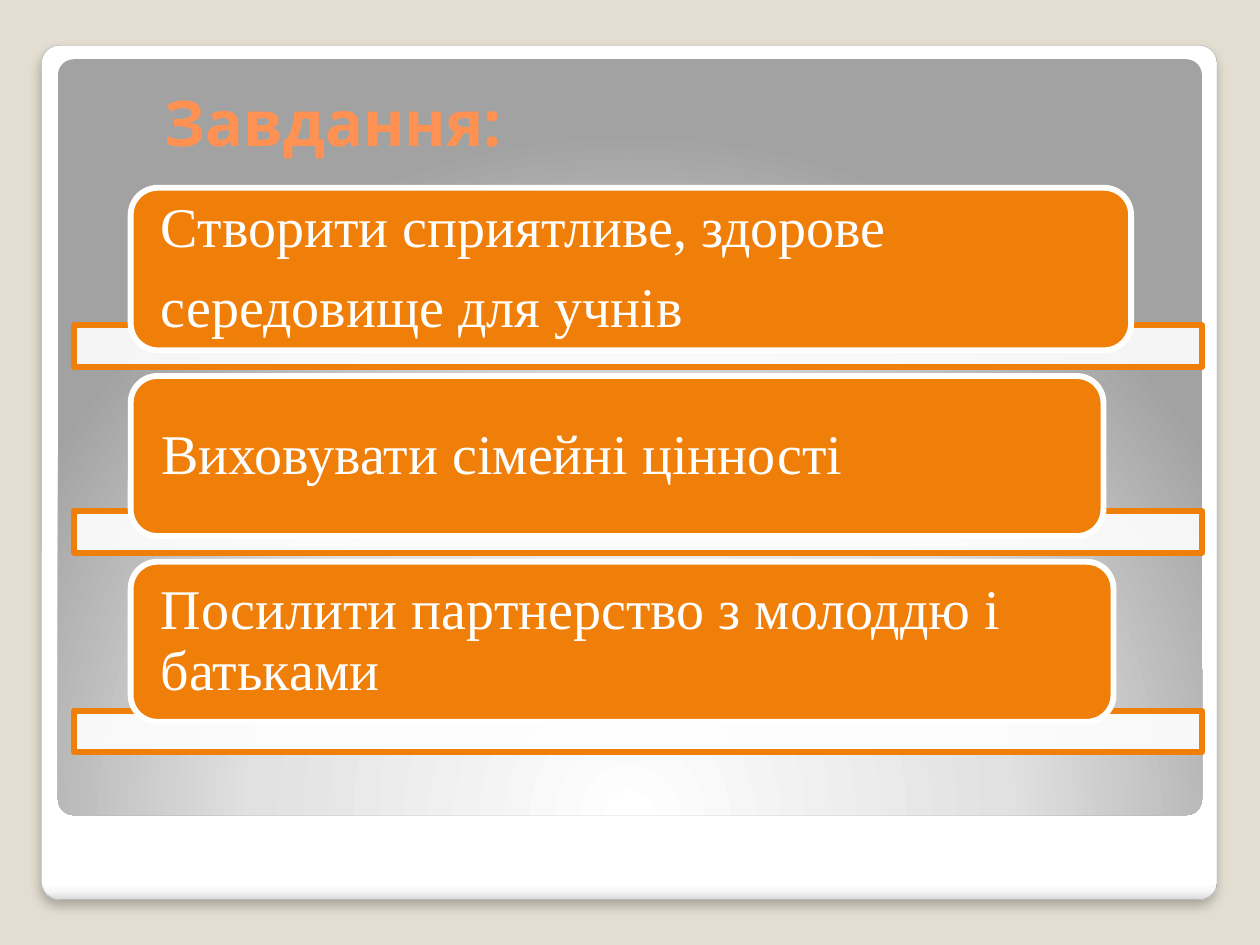
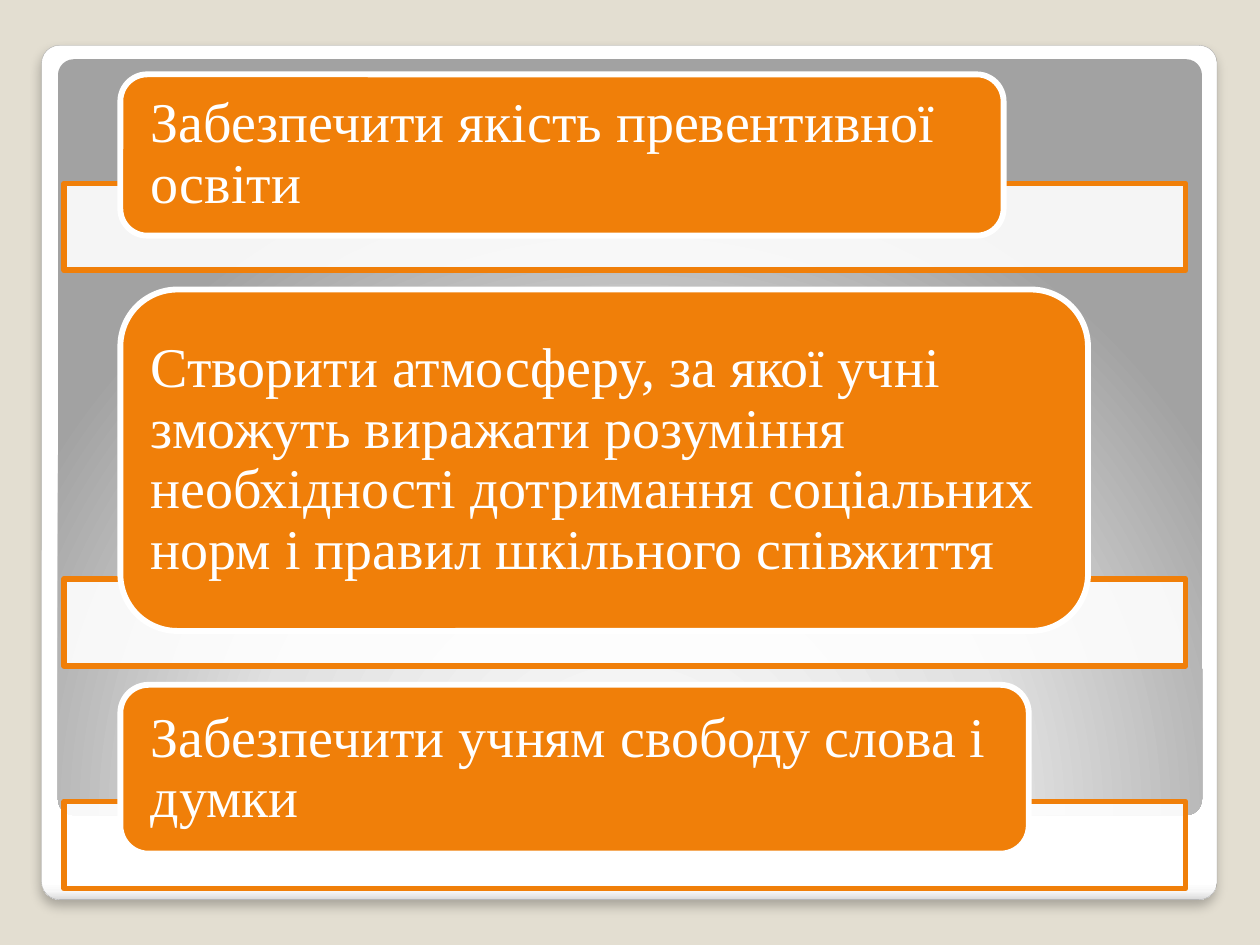
from collections import namedtuple

from lxml.etree import SubElement
from pptx import Presentation
from pptx.dml.color import RGBColor
from pptx.enum.shapes import MSO_SHAPE as Preset
from pptx.enum.text import MSO_ANCHOR as Anchor, PP_ALIGN as Align
from pptx.oxml.ns import qn
from pptx.util import Emu, Inches, Pt

COLORS = {
    "backdrop": "E3DED1",
    "white": "FFFFFF",
    "orange": "F07F09",
    "title": "FF9153",
    "frame_edge": "A4A4A4",
    "frame_low": "F7F7F7",
    "frame_foot": "DADADA",
    "panel_mid": "E1E1E1",
    "panel_rim": "A2A2A2",
    "shadow": "000000",
}
COLUMNS, ROWS = 100, 75
WIDTH, HEIGHT = Inches(10), Inches(7.5)
COLUMN, ROW = WIDTH / COLUMNS, HEIGHT / ROWS

Box = namedtuple("Box", "left top width height")
Task = namedtuple("Task", "lines width height overlap", defaults=(0.6,))

FRAME = Box(3.3, 3.6, 93.3, 67.8)
PANEL = Box(4.6, 4.7, 90.8, 60)
TITLE = Box(13.1, 6, 60, 7.3)

CARD_INDENT = 0.05
CARD_PADDING = 2.4
CARD_CORNER = 1 / 6
CORNER_INSET = 0.29
GAP_PER_BAR = 0.22
EDGE = 3.35

TITLE_FONT = {"name": "Verdana", "size": Pt(36), "bold": True}
TASK_FONT = {"name": "Times New Roman", "size": Pt(32)}
TASK_PARAGRAPH = {"alignment": Align.LEFT, "line_spacing": 0.9, "space_after": Pt(11.2)}


def color(name):
    return RGBColor.from_string(COLORS[name])


def apply(target, values):
    for key, value in values.items():
        setattr(target, key, value)


def on_slide(box):
    return (
        Emu(round(box.left * COLUMN)),
        Emu(round(box.top * ROW)),
        Emu(round(box.width * COLUMN)),
        Emu(round(box.height * ROW)),
    )


def add_block(slide, preset, box, fill=None, edge=None, edge_width=EDGE):
    block = slide.shapes.add_shape(preset, *on_slide(box))
    block.shadow.inherit = False
    if fill:
        block.fill.solid()
        block.fill.fore_color.rgb = color(fill)
    if edge:
        block.line.color.rgb = color(edge)
        block.line.width = Pt(edge_width)
    else:
        block.line.fill.background()
    return block


def add_color(parent, name, alpha=None):
    entry = SubElement(parent, qn("a:srgbClr"), val=COLORS[name])
    if alpha:
        SubElement(entry, qn("a:alpha"), val=str(alpha * 1000))


def set_gradient(block, stops):
    block.fill.gradient()
    gradient = block.element.spPr.find(qn("a:gradFill"))
    for child in list(gradient):
        gradient.remove(child)
    stop_list = SubElement(gradient, qn("a:gsLst"))
    for share, name in stops:
        add_color(SubElement(stop_list, qn("a:gs"), pos=str(share * 1000)), name)
    return gradient


def write(frame, lines, font, font_color, paragraph_format):
    for number, line in enumerate(lines):
        paragraph = frame.add_paragraph() if number else frame.paragraphs[0]
        apply(paragraph, paragraph_format)
        run = paragraph.add_run()
        run.text = line
        apply(run.font, font)
        run.font.color.rgb = color(font_color)


def draw_frame(slide, box):
    frame = add_block(slide, Preset.ROUNDED_RECTANGLE, box, edge="frame_edge", edge_width=0.16)
    frame.adjustments[0] = 0.021
    stops = [(0, "white"), (98, "white"), (99, "frame_low"), (100, "frame_foot")]
    SubElement(set_gradient(frame, stops), qn("a:lin"), ang="5400000", scaled="0")
    shadow = SubElement(
        frame.element.spPr.find(qn("a:effectLst")),
        qn("a:outerShdw"),
        blurRad=str(Pt(6)),
        dist=str(Pt(4)),
        dir="5400000",
        algn="t",
        rotWithShape="0",
    )
    add_color(shadow, "shadow", 25)


def draw_panel(slide, box):
    panel = add_block(slide, Preset.ROUNDED_RECTANGLE, box)
    panel.adjustments[0] = 0.021
    stops = [(0, "white"), (55, "panel_mid"), (100, "panel_rim")]
    glow = SubElement(set_gradient(panel, stops), qn("a:path"), path="circle")
    SubElement(glow, qn("a:fillToRect"), l="50000", t="175000", r="50000", b="-75000")


def draw_title(slide, box, title):
    frame = slide.shapes.add_textbox(*on_slide(box)).text_frame
    apply(frame, {
        "word_wrap": True, "vertical_anchor": Anchor.MIDDLE,
        "margin_left": 0, "margin_right": 0, "margin_top": 0, "margin_bottom": 0,
    })
    write(frame, [title], TITLE_FONT, "title", {"alignment": Align.LEFT})


def draw_bar(slide, box):
    bar = add_block(slide, Preset.RECTANGLE, box, "white", "orange")
    tint = bar.element.spPr.find(qn("a:solidFill")).find(qn("a:srgbClr"))
    SubElement(tint, qn("a:alpha"), val="90000")


def draw_card(slide, box, lines):
    card = add_block(slide, Preset.ROUNDED_RECTANGLE, box, "orange", "white")
    padding = CARD_PADDING - CORNER_INSET * CARD_CORNER * min(box.width, box.height)
    side = Emu(round(padding * COLUMN))
    apply(card.text_frame, {
        "word_wrap": True, "vertical_anchor": Anchor.MIDDLE,
        "margin_left": side, "margin_right": side, "margin_top": 0, "margin_bottom": 0,
    })
    write(card.text_frame, lines, TASK_FONT, "white", TASK_PARAGRAPH)


def draw_tasks(slide, box, bar_height, tasks):
    top = box.top
    for task in tasks:
        card = Box(box.left + CARD_INDENT * box.width, top, task.width, task.height)
        bar_top = top + task.height - task.overlap * bar_height
        draw_bar(slide, Box(box.left, bar_top, box.width, bar_height))
        draw_card(slide, card, task.lines)
        top = bar_top + (1 + GAP_PER_BAR) * bar_height


def build_task_slide(deck, box, bar_height, tasks, title=None):
    slide = deck.slides.add_slide(deck.slide_layouts[6])
    slide.background.fill.solid()
    slide.background.fill.fore_color.rgb = color("backdrop")
    draw_frame(slide, FRAME)
    draw_panel(slide, PANEL)
    if title:
        draw_title(slide, TITLE, title)
    draw_tasks(slide, box, bar_height, tasks)


def main():
    deck = Presentation()
    apply(deck, {"slide_width": WIDTH, "slide_height": HEIGHT})
    build_task_slide(deck, Box(5.9, 14.9, 89.5, 44.8), 3.3, [
        Task(["Створити сприятливе, здорове", "середовище для учнів"], 79.4, 12.9),
        Task(["Виховувати сімейні цінності"], 77.2, 12.7),
        Task(["Посилити партнерство з молоддю і батьками"], 78, 12.7, 0.27),
    ], "Завдання:")
    build_task_slide(deck, Box(5.1, 5.9, 89, 64.8), 6.9, [
        Task(["Забезпечити якість превентивної освіти"], 70.1, 12.8),
        Task(["Створити атмосферу, за якої учні зможуть виражати розуміння "
              "необхідності дотримання соціальних норм і правил шкільного співжиття"],
             76.8, 27.1),
        Task(["Забезпечити учням свободу слова і думки"], 72.1, 13.4),
    ])
    deck.save("out.pptx")


if __name__ == "__main__":
    main()
